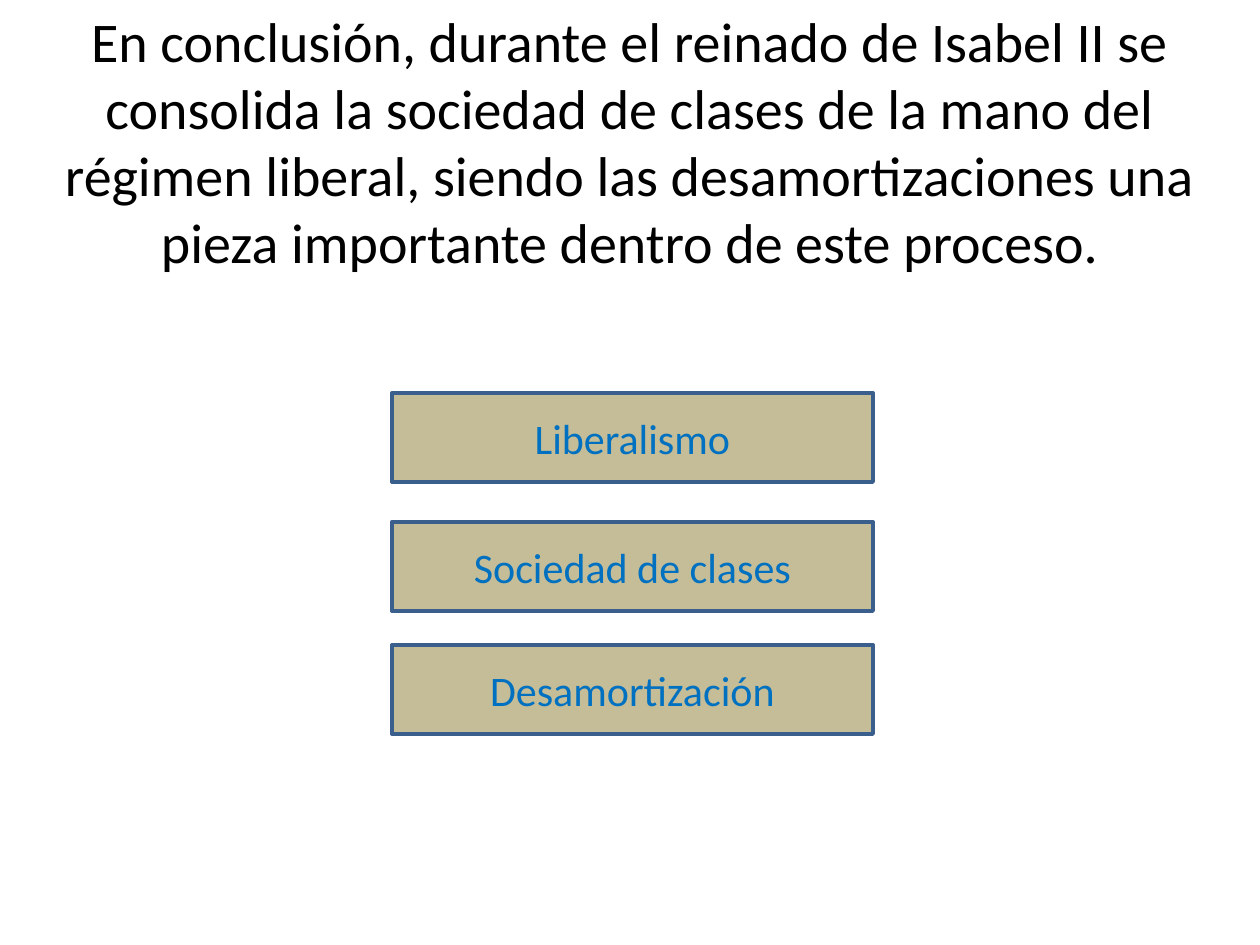
from pptx import Presentation
from pptx.dml.color import RGBColor
from pptx.enum.shapes import MSO_SHAPE
from pptx.enum.text import MSO_ANCHOR, PP_ALIGN
from pptx.util import Cm, Pt

CONCLUSION = (
    "En conclusión, durante el reinado de Isabel II se consolida la sociedad "
    "de clases de la mano del régimen liberal, siendo las desamortizaciones "
    "una pieza importante dentro de este proceso."
)
CONCEPTS = {"Liberalismo": 0, "Sociedad de clases": 2.6, "Desamortización": 5.08}


def colour(value):
    return RGBColor.from_string(value)


def write_text(shape, text, size=24, fill="000000", anchor=MSO_ANCHOR.MIDDLE):
    frame = shape.text_frame
    frame.word_wrap = True
    frame.vertical_anchor = anchor
    para = frame.paragraphs[0]
    para.alignment = PP_ALIGN.CENTER
    span = para.add_run()
    span.text = text
    span.font.name = "Calibri"
    span.font.size = Pt(size)
    span.font.color.rgb = colour(fill)


def add_conclusion(page, left, top, width, height):
    box = page.shapes.add_textbox(Cm(left), Cm(top), Cm(width), Cm(height))
    write_text(box, CONCLUSION, size=32, anchor=MSO_ANCHOR.TOP)


def add_concepts(page, left, top, width, box_height):
    for concept, offset in CONCEPTS.items():
        box = page.shapes.add_shape(
            MSO_SHAPE.RECTANGLE, Cm(left), Cm(top + offset), Cm(width), Cm(box_height)
        )
        box.shadow.inherit = False
        box.fill.solid()
        box.fill.fore_color.rgb = colour("C4BD97")
        box.line.color.rgb = colour("3A5F8C")
        box.line.width = Pt(2)
        write_text(box, concept, fill="0070C0")


def main():
    deck = Presentation()
    deck.slide_width, deck.slide_height = Cm(25.4), Cm(19.05)
    page = deck.slides.add_slide(deck.slide_layouts[6])
    add_conclusion(page, 0, 0, 25.4, 5.74)
    add_concepts(page, 7.9, 7.92, 9.7, 1.8)
    deck.save("out.pptx")


if __name__ == "__main__":
    main()
